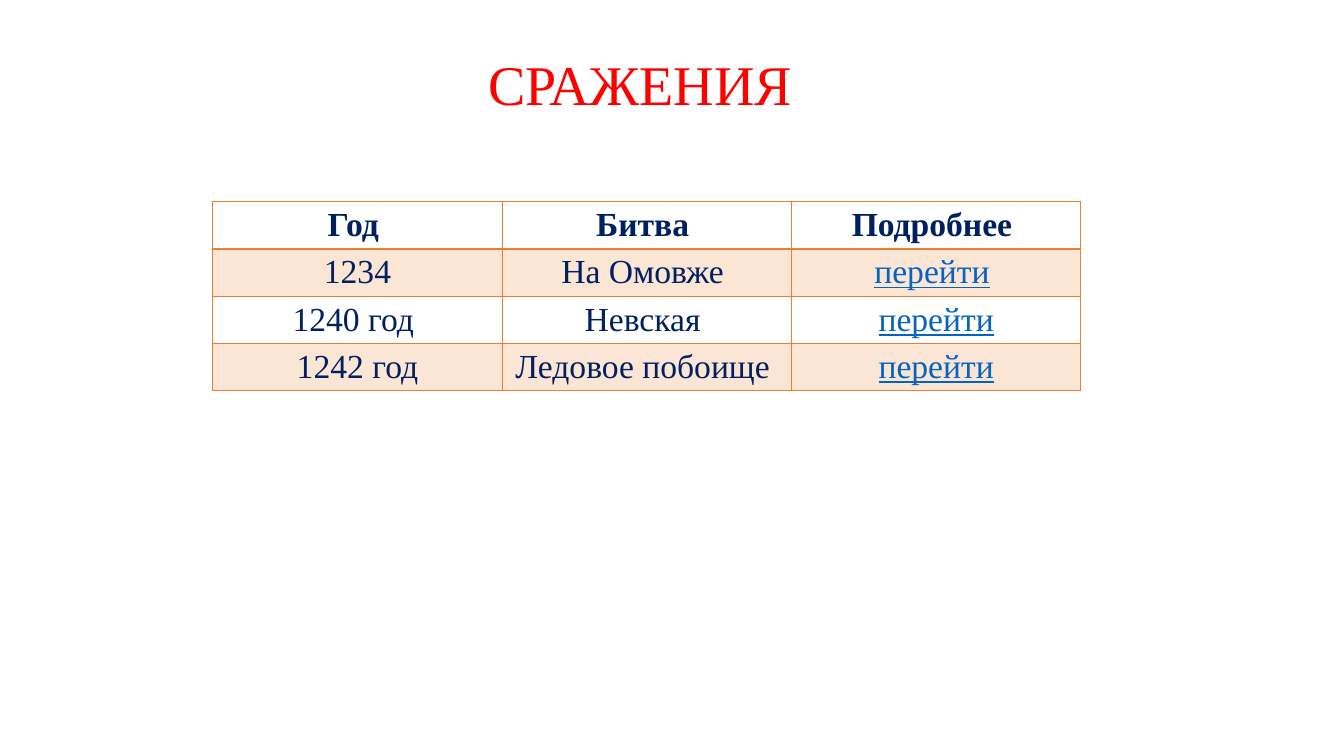
import pptx
import pptx.dml.color
import pptx.enum.text
import pptx.oxml.ns
import pptx.util
from lxml import etree

Pt = pptx.util.Pt
RGBColor = pptx.dml.color.RGBColor
qn = pptx.oxml.ns.qn
CENTER = pptx.enum.text.PP_ALIGN.CENTER
MIDDLE = pptx.enum.text.MSO_ANCHOR.MIDDLE

RED = RGBColor(0xFF, 0x00, 0x00)
NAVY = RGBColor(0x00, 0x20, 0x60)
LINK = RGBColor(0x05, 0x63, 0xC1)
ORANGE = RGBColor(0xED, 0x7D, 0x31)

TITLE = "СРАЖЕНИЯ"
GO = "перейти"
# Each cell is a list of runs.
BATTLES = [
    [["Год "], ["Битва "], ["Подробнее "]],
    [["1234"], ["На Омовже "], [GO, " "]],
    [["1240 год "], ["Невская "], [GO]],
    [["1242 год"], ["Ледовое побоище "], [GO]],
]

TITLE_BOX = dict(left=Pt(43.2), top=Pt(10.1), width=Pt(828), height=Pt(104.4))
TABLE_LEFT, TABLE_TOP = 152, 144
COL_W, ROW_H = 206.7, 33.8
BORDER, HEADER_BORDER = 1, 2
BAND_ALPHA = 20

TITLE_FONT = dict(name="Times New Roman", size=Pt(40))
CELL_FONT = dict(name="Times New Roman", size=Pt(24))
CELL_FORMAT = dict(margin_top=Pt(3.5), margin_bottom=Pt(2))


def apply(obj, values):
    for name, value in values.items():
        setattr(obj, name, value)


def add_run(p, text, color, font):
    r = p.add_run()
    r.text = text
    apply(r.font, font)
    r.font.color.rgb = color


def set_borders(cell, widths):
    """Put the four side lines ahead of the cell's fill, as the schema orders them."""
    tcPr = cell._tc.get_or_add_tcPr()
    for i, (side, width) in enumerate(widths.items()):
        ln = etree.Element(qn("a:" + side), w=str(Pt(width)))
        fill = etree.SubElement(ln, qn("a:solidFill"))
        etree.SubElement(fill, qn("a:srgbClr"), val=str(ORANGE))
        tcPr.insert(i, ln)


def fill_band(cell):
    cell.fill.solid()
    cell.fill.fore_color.rgb = ORANGE
    color = cell._tc.tcPr.find(qn("a:solidFill")).find(qn("a:srgbClr"))
    etree.SubElement(color, qn("a:alpha"), val=str(BAND_ALPHA * 1000))


def add_title(s):
    sp = s.shapes.title
    apply(sp, TITLE_BOX)
    tf = sp.text_frame
    tf.vertical_anchor = MIDDLE
    p = tf.paragraphs[0]
    apply(p, dict(alignment=CENTER, line_spacing=0.9))
    add_run(p, TITLE, RED, TITLE_FONT)


def add_battles(s):
    n_rows, n_cols = len(BATTLES), len(BATTLES[0])
    table = s.shapes.add_table(n_rows, n_cols, Pt(TABLE_LEFT), Pt(TABLE_TOP),
                               Pt(COL_W * n_cols), Pt(ROW_H * n_rows)).table
    apply(table, dict(first_row=False, horz_banding=False))
    for col in table.columns:
        col.width = Pt(COL_W)
    for i, row in enumerate(BATTLES):
        table.rows[i].height = Pt(ROW_H)
        for j, runs in enumerate(row):
            cell = table.cell(i, j)
            apply(cell, CELL_FORMAT)
            if i % 2:
                fill_band(cell)
            else:
                cell.fill.background()
            set_borders(cell, dict(lnL=BORDER, lnR=BORDER,
                                   lnT=HEADER_BORDER if i == 1 else BORDER,
                                   lnB=HEADER_BORDER if i == 0 else BORDER))
            p = cell.text_frame.paragraphs[0]
            p.alignment = CENTER
            for text in runs:
                is_link = text == GO
                add_run(p, text, LINK if is_link else NAVY,
                        dict(CELL_FONT, bold=i == 0, underline=is_link))


def main():
    prs = pptx.Presentation()
    apply(prs, dict(slide_width=Pt(960), slide_height=Pt(540)))
    s = prs.slides.add_slide(prs.slide_layouts[5])
    add_title(s)
    add_battles(s)
    prs.save("out.pptx")


if __name__ == "__main__":
    main()
